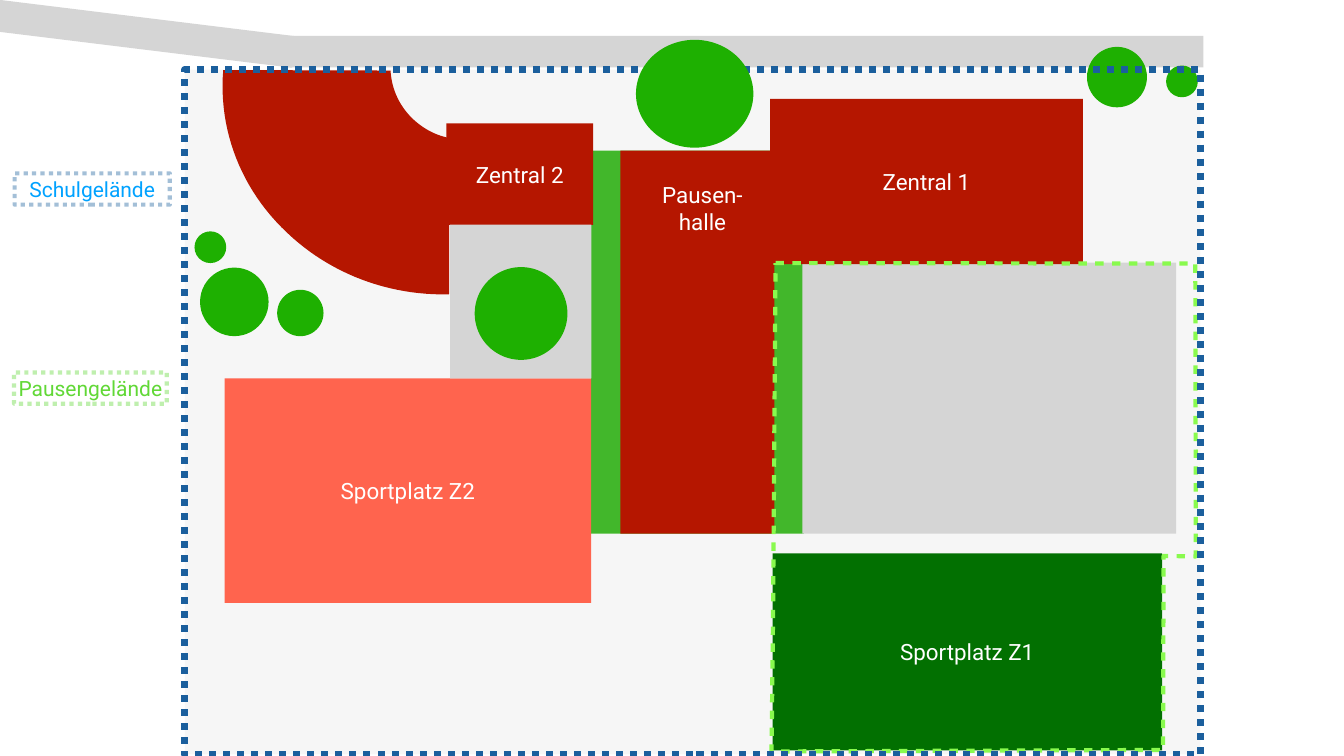
import pptx
import pptx.dml.color
import pptx.enum.dml
import pptx.enum.shapes
import pptx.enum.text
import pptx.oxml
import pptx.oxml.ns
import pptx.util
from dataclasses import dataclass
from pptx.util import Inches


@dataclass(frozen=True)
class Theme:
    font: str = "Roboto"
    block_size: int = 32
    legend_size: int = 30
    white: str = "FFFFFF"
    paved: str = "D5D5D5"
    building: str = "B51600"
    tree: str = "1EB001"
    sport_1: str = "027001"
    sport_2: str = "FF644E"
    school: str = "1B5F9D"
    school_text: str = "00A2FF"
    recess: str = "61D836"
    recess_border: str = "89FA4E"


theme = Theme()
RECTANGLE = pptx.enum.shapes.MSO_SHAPE.RECTANGLE
OVAL = pptx.enum.shapes.MSO_SHAPE.OVAL
DOTTED = pptx.enum.dml.MSO_LINE.ROUND_DOT
rgb = pptx.dml.color.RGBColor.from_string

presentation = pptx.Presentation()
presentation.slide_width = Inches(26.67)
presentation.slide_height = Inches(15)
slide = presentation.slides.add_slide(presentation.slide_layouts[6])


def paint(shape, fill=None, line=None, width=0, alpha=None):
    """Set fill and outline; alpha is the opacity of either in percent."""
    shape.shadow.inherit = False
    if fill:
        shape.fill.solid()
        shape.fill.fore_color.rgb = rgb(fill)
    else:
        shape.fill.background()
    if line:
        shape.line.color.rgb = rgb(line)
        shape.line.width = pptx.util.Pt(width)
    else:
        shape.line.fill.background()
    if alpha:
        color = shape._element.spPr.find(".//" + pptx.oxml.ns.qn("a:srgbClr"))
        color.append(pptx.oxml.parse_xml(
            f'<a:alpha {pptx.oxml.ns.nsdecls("a")} val="{alpha * 1000}"/>'))


def add_area(kind, box, fill=None, text=None, size=theme.block_size,
             color=theme.white, rotation=0, **style):
    shape = slide.shapes.add_shape(kind, *map(Inches, box))
    shape.rotation = rotation
    paint(shape, fill, **style)
    if text:
        frame = shape.text_frame
        frame.word_wrap = True
        frame.vertical_anchor = pptx.enum.text.MSO_ANCHOR.MIDDLE
        frame.margin_left = frame.margin_right = Inches(0.06)
        frame.margin_top = frame.margin_bottom = Inches(0.06)
        paragraph = frame.paragraphs[0]
        paragraph.text = text
        paragraph.alignment = pptx.enum.text.PP_ALIGN.CENTER
        paragraph.font.name = theme.font
        paragraph.font.size = pptx.util.Pt(size)
        paragraph.font.color.rgb = rgb(color)
    return shape


# Street, green strips and school grounds
grounds = (3.67, 1.38, 20.15, 13.59)
add_area(RECTANGLE, (5.69, 0.71, 18.19, 0.63), theme.paved)
add_area(RECTANGLE, (11.73, 2.99, 4.22, 7.6), theme.tree)
add_area(RECTANGLE, grounds, theme.paved, alpha=20)
add_area(RECTANGLE, (16.94, 4.19, 5.38, 7.42), theme.paved, rotation=270)

# Sports grounds and main buildings
for box, fill, text in [
    ((4.46, 7.51, 7.27, 4.45), theme.sport_2, "Sportplatz Z2"),
    ((15.33, 10.98, 7.73, 3.91), theme.sport_1, "Sportplatz Z1"),
    ((12.31, 2.99, 3.06, 7.6), theme.building, None),
    ((15.28, 1.96, 6.21, 3.28), theme.building, "Zentral 1"),
]:
    add_area(RECTANGLE, box, fill, text)

for box in [(21.57, 0.93, 1.19, 1.2), (23.14, 1.3, 0.63, 0.63)]:
    add_area(OVAL, box, theme.tree)

# Curved wing: cubic curves sampled into short segments
outer_curves = [
    [(4.43, 1.39), (4.33, 2.59), (4.79, 3.77), (5.7, 4.62)],
    [(5.7, 4.62), (6.55, 5.43), (7.71, 5.87), (8.91, 5.84)],
]
inner_curves = [
    [(8.92, 2.74), (8.67, 2.69), (8.45, 2.58), (8.26, 2.42)],
    [(8.26, 2.42), (7.95, 2.16), (7.77, 1.79), (7.75, 1.4)],
]
steps = 24
wing_points = []
for curve in outer_curves + inner_curves:
    for step in range(steps + 1):
        t = step / steps
        weights = ((1 - t) ** 3, 3 * t * (1 - t) ** 2, 3 * t ** 2 * (1 - t), t ** 3)
        wing_points.append(tuple(
            Inches(sum(weight * point[axis] for weight, point in zip(weights, curve)))
            for axis in (0, 1)))
wing = slide.shapes.build_freeform(*wing_points[0])
wing.add_line_segments(wing_points[1:], close=True)
paint(wing.convert_to_shape(), theme.building)

add_area(RECTANGLE, (8.86, 2.45, 2.91, 2.01), theme.building, "Zentral 2")
add_area(RECTANGLE, (-0.67, 0.32, 6.53, 0.63), theme.paved, rotation=7)

for left, top, diameter in [(3.86, 4.59, 0.63), (5.5, 5.75, 0.92), (3.97, 5.31, 1.36)]:
    add_area(OVAL, (left, top, diameter, diameter), theme.tree)

add_area(RECTANGLE, (12.7, 3.25, 2.48, 1.75), theme.building, "Pausen-halle")

# Legend
for box, text, color, line, wrap in [
    ((0.29, 3.44, 3.08, 0.62), "Schulgelände", theme.school_text, theme.school, True),
    ((0.28, 7.39, 3.03, 0.62), "Pausengelände", theme.recess, theme.recess, False),
]:
    label = add_area(RECTANGLE, box, None, text, theme.legend_size, color,
                     line=line, width=6, alpha=40)
    label.line.dash_style = DOTTED
    label.text_frame.word_wrap = wrap
    label.text_frame.auto_size = pptx.enum.text.MSO_AUTO_SIZE.SHAPE_TO_FIT_TEXT

# Border of the recess area
recess_points = [
    (Inches(x), Inches(y)) for x, y in [
        (15.39, 5.22), (23.72, 5.23), (23.73, 11.04), (23.09, 11.03),
        (23.08, 14.88), (15.31, 14.91), (15.34, 12.27)]]
recess = slide.shapes.build_freeform(*recess_points[0])
recess.add_line_segments(recess_points[1:], close=True)
recess_border = recess.convert_to_shape()
paint(recess_border, line=theme.recess_border, width=6)
recess_border.line._get_or_add_ln().append(pptx.oxml.parse_xml(
    f'<a:custDash {pptx.oxml.ns.nsdecls("a")}><a:ds d="200000" sp="200000"/></a:custDash>'))

# Courtyard, border of the school grounds and front tree
add_area(RECTANGLE, (8.81, 4.58, 3.05, 2.8), theme.paved, rotation=270)
add_area(OVAL, (9.42, 5.3, 1.84, 1.84), theme.tree)
school_border = add_area(RECTANGLE, grounds, line=theme.school, width=10)
school_border.line.dash_style = DOTTED
add_area(OVAL, (12.62, 0.79, 2.33, 2.14), theme.tree)

presentation.save("out.pptx")
